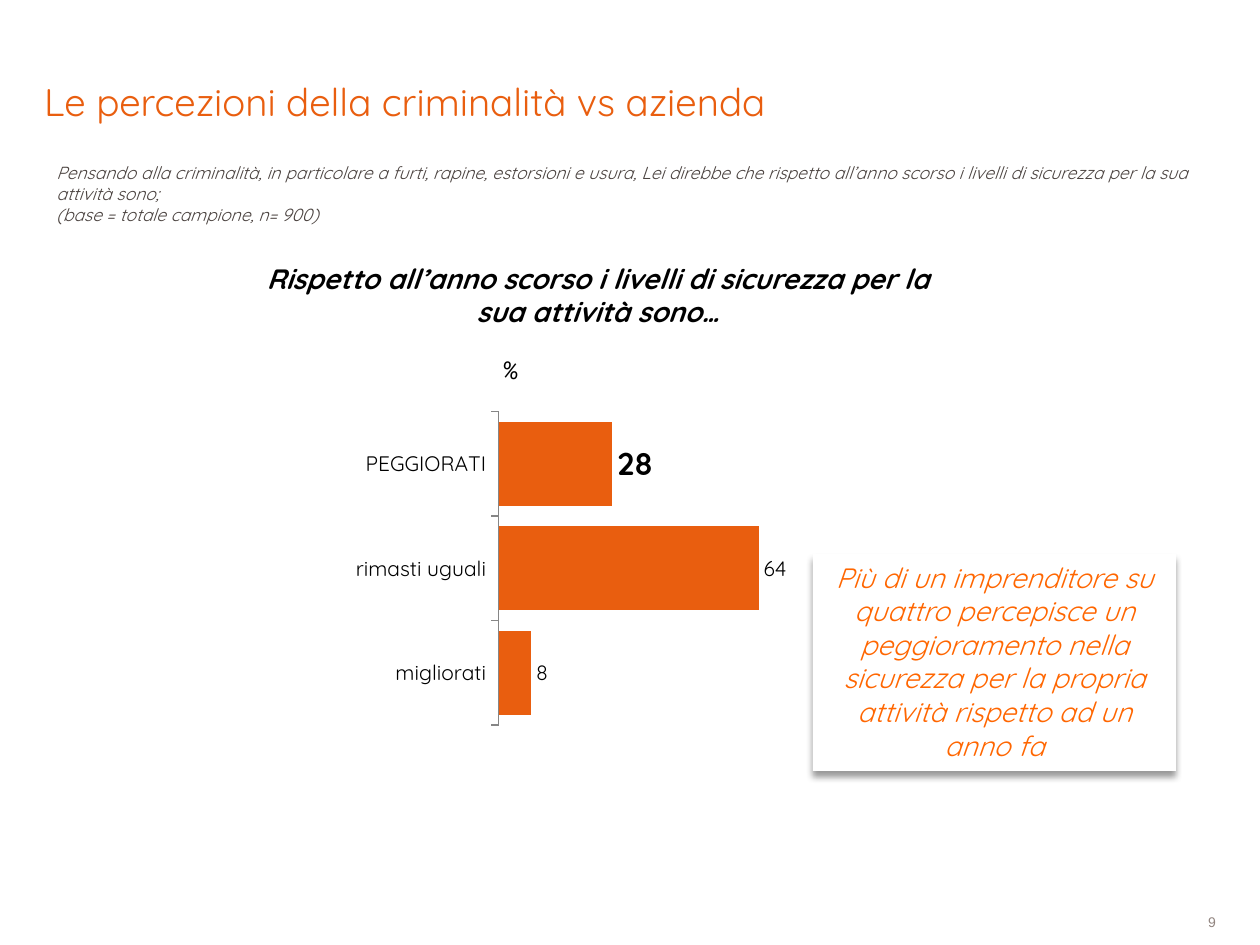
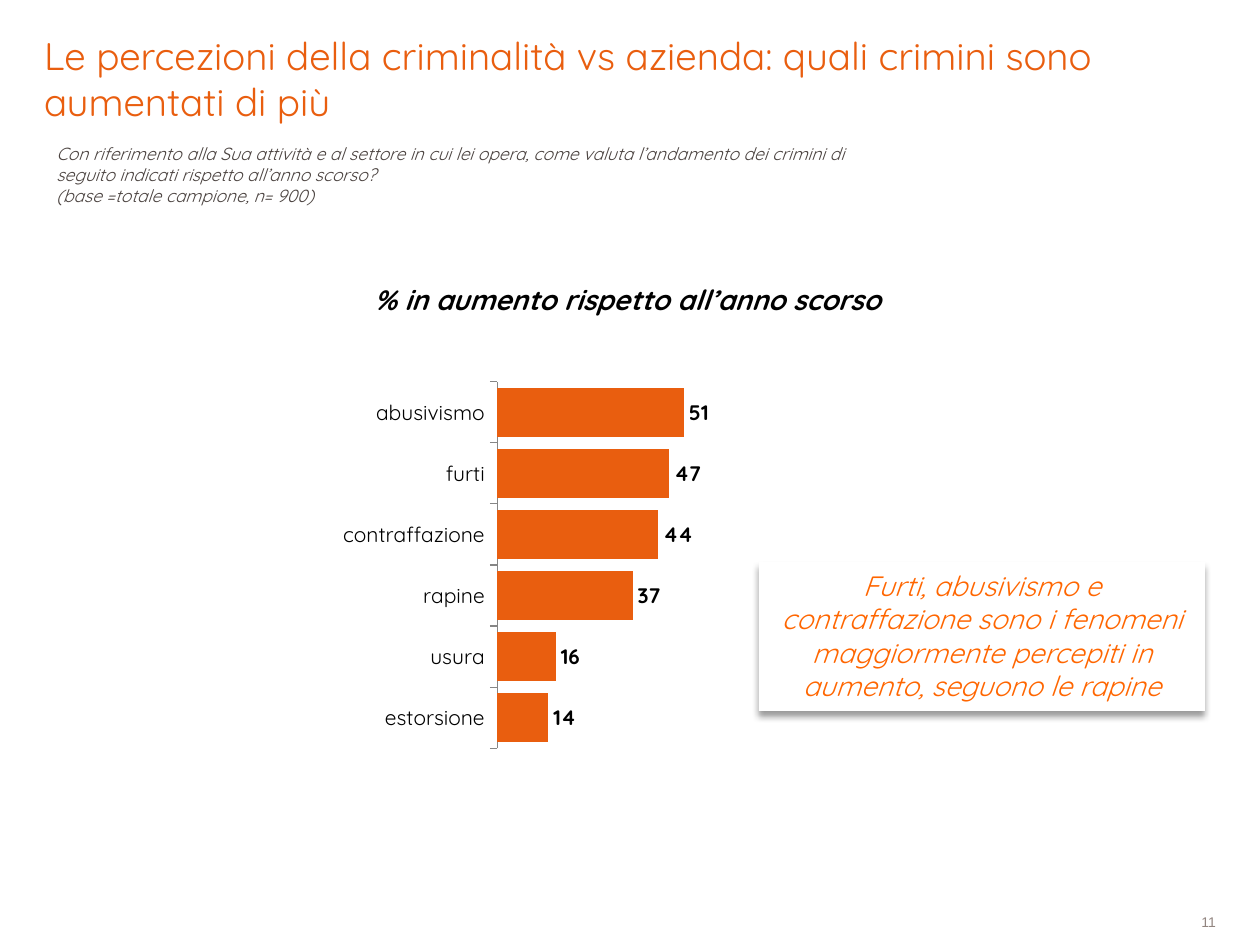
from dataclasses import dataclass

from lxml import etree
from pptx import Presentation
from pptx.chart.data import CategoryChartData
from pptx.dml.color import RGBColor
from pptx.enum.chart import XL_CHART_TYPE, XL_LABEL_POSITION, XL_TICK_MARK
from pptx.enum.shapes import MSO_SHAPE
from pptx.enum.text import MSO_ANCHOR, MSO_AUTO_SIZE, PP_ALIGN
from pptx.oxml import parse_xml
from pptx.oxml.ns import nsdecls, qn
from pptx.util import Emu, Pt

BAR = XL_CHART_TYPE.BAR_CLUSTERED
OUTSIDE_END = XL_LABEL_POSITION.OUTSIDE_END
TICK_OUT, TICK_NONE = XL_TICK_MARK.OUTSIDE, XL_TICK_MARK.NONE
RECT = MSO_SHAPE.RECTANGLE
TOP, MIDDLE, BOTTOM = MSO_ANCHOR.TOP, MSO_ANCHOR.MIDDLE, MSO_ANCHOR.BOTTOM
LEFT, CENTER, RIGHT = PP_ALIGN.LEFT, PP_ALIGN.CENTER, PP_ALIGN.RIGHT

PX_PER_INCH = 126
SLIDE_SIZE = (1260, 945)
TITLE_BOX = (44, 35, 1052, 89)
NUMBER_BOX = (1047, 914, 169, 15)
TITLE_ONLY = 5


# ---- Theme: colours, fonts and type sizes ----
@dataclass(frozen=True)
class Theme:
    orange: str = "E95E0F"
    callout_orange: str = "FF6600"
    grey: str = "4A423F"
    light_grey: str = "928580"
    axis: str = "868686"
    black: str = "000000"
    white: str = "FFFFFF"
    text: str = "Quicksand"
    chart: str = "Roboto"
    number: str = "Arial"


T = Theme()
STYLES = {
    "title": dict(name=T.text, size=22, color=T.orange, bold=False),
    "question": dict(name=T.text, size=10, color=T.grey, italic=True),
    "heading": dict(name=T.text, size=16, color=T.black, bold=True, italic=True),
    "unit": dict(name=T.chart, size=14, color=T.black, italic=True),
    "callout": dict(name=T.text, size=16, color=T.callout_orange, italic=True),
    "number": dict(name=T.number, size=8, color=T.light_grey),
    "chart": dict(name=T.chart, size=18, color=T.black),
    "label": dict(name=T.text, size=12, color=T.black, bold=False),
    "bold_label": dict(name=T.text, size=12, color=T.black, bold=True),
    "key_label": dict(name=T.text, size=18, color=T.black, bold=True),
}


# ---- Helpers ----
def px(n):
    return Emu(round(n * 914400 / PX_PER_INCH))


def rgb(color):
    return RGBColor.from_string(color)


def style_font(font, style):
    for key, value in STYLES[style].items():
        if key == "color":
            font.color.rgb = rgb(value)
        else:
            setattr(font, key, Pt(value) if key == "size" else value)


def fill_text(tf, paragraphs, style, align=LEFT, anchor=TOP, inset=True):
    frame = dict(word_wrap=True, auto_size=MSO_AUTO_SIZE.NONE, vertical_anchor=anchor)
    if not inset:
        frame.update(dict.fromkeys(
            ("margin_left", "margin_top", "margin_right", "margin_bottom"), 0))
    for key, value in frame.items():
        setattr(tf, key, value)
    for i, text in enumerate(paragraphs):
        p = tf.add_paragraph() if i else tf.paragraphs[0]
        p.alignment = align
        r = p.add_run()
        r.text = text
        style_font(r.font, style)


# ---- Elements ----
def add_text(s, box, paragraphs, style, **layout):
    sp = s.shapes.add_textbox(*map(px, box))
    fill_text(sp.text_frame, paragraphs, style, **layout)


def add_slide(prs, title, number):
    s = prs.slides.add_slide(prs.slide_layouts[TITLE_ONLY])
    sp = s.shapes.title
    sp.left, sp.top, sp.width, sp.height = map(px, TITLE_BOX)
    fill_text(sp.text_frame, [title], "title", anchor=BOTTOM, inset=False)
    add_text(s, NUMBER_BOX, [number], "number",
             align=RIGHT, anchor=MIDDLE, inset=False)
    return s


def add_callout(s, box, text):
    sp = s.shapes.add_shape(RECT, *map(px, box))
    sp.fill.solid()
    sp.fill.fore_color.rgb = rgb(T.white)
    sp.line.fill.background()
    sp.shadow.inherit = False
    effects = sp.element.spPr.find(qn("a:effectLst"))
    effects.append(parse_xml(
        f'<a:outerShdw {nsdecls("a")} blurRad="{Pt(4)}" dist="{Pt(3)}" '
        f'dir="5400000" rotWithShape="0"><a:srgbClr val="{T.black}">'
        '<a:alpha val="40000"/></a:srgbClr></a:outerShdw>'))
    fill_text(sp.text_frame, [text], "callout", align=CENTER)


def set_plot_layout(chart, **edges):
    plot_area = chart.element.find(".//" + qn("c:plotArea"))
    for old in plot_area.findall(qn("c:layout")):
        plot_area.remove(old)
    layout = etree.Element(qn("c:layout"))
    manual = etree.SubElement(layout, qn("c:manualLayout"))
    values = dict(layoutTarget="inner", xMode="edge", yMode="edge", **edges)
    for key, value in values.items():
        etree.SubElement(manual, qn("c:" + key)).set("val", str(value))
    plot_area.insert(0, layout)


def add_bar_chart(s, box, values, plot_height, label_style, key_point=None):
    data = CategoryChartData(number_format="0")
    data.categories = list(values)
    data.add_series("Series 1", list(values.values()))
    chart = s.shapes.add_chart(BAR, *map(px, box), data).chart
    chart.has_legend = chart.has_title = False
    style_font(chart.font, "chart")
    set_plot_layout(chart, x=0.28, y=0, w=0.5, h=plot_height)

    # Axes
    cat, val = chart.category_axis, chart.value_axis
    for key, value in dict(reverse_order=True, major_tick_mark=TICK_OUT,
                           minor_tick_mark=TICK_NONE).items():
        setattr(cat, key, value)
    cat.format.line.color.rgb = rgb(T.axis)
    style_font(cat.tick_labels.font, "label")
    for key, value in dict(minimum_scale=0, maximum_scale=100, major_unit=10,
                           has_major_gridlines=False, visible=False).items():
        setattr(val, key, value)

    # Bars and value labels
    plot = chart.plots[0]
    plot.gap_width = 24
    plot.vary_by_categories = False
    series = plot.series[0]
    series.format.fill.solid()
    series.format.fill.fore_color.rgb = rgb(T.orange)
    labels = series.data_labels
    for key, value in dict(show_value=True, number_format="0",
                           number_format_is_linked=False,
                           position=OUTSIDE_END).items():
        setattr(labels, key, value)
    style_font(labels.font, label_style)
    if key_point is not None:
        label = series.points[key_point].data_label
        style_font(label.font, "key_label")
        label.position = OUTSIDE_END


# ---- Slides ----
def build_security_levels(prs):
    s = add_slide(prs, "Le percezioni della criminalità vs azienda", "9")
    add_bar_chart(s, (271, 411, 813, 532),
                  {"PEGGIORATI": 28, "rimasti uguali": 64, "migliorati": 8},
                  0.59, "label", key_point=0)
    add_text(s, (486, 355, 49, 29), ["%"], "unit",
             align=CENTER, anchor=MIDDLE, inset=False)
    add_text(s, (249, 255, 698, 81),
             ["Rispetto all’anno scorso i livelli di sicurezza per la "
              "sua attività sono…"], "heading", align=CENTER)
    add_text(s, (44, 156, 1172, 77),
             ["Pensando alla criminalità, in particolare a furti, rapine, "
              "estorsioni e usura, Lei direbbe che rispetto all’anno scorso "
              "i livelli di sicurezza per la sua attività sono;",
              "(base = totale campione, n= 900)"], "question")
    add_callout(s, (813, 554, 363, 217),
                "Più di un imprenditore su quattro percepisce un peggioramento "
                "nella sicurezza per la propria attività rispetto ad un anno fa")


def build_rising_crimes(prs):
    s = add_slide(prs, "Le percezioni della criminalità vs azienda: "
                       "quali crimini sono aumentati di più", "11")
    add_text(s, (44, 137, 854, 97),
             ["Con riferimento alla Sua attività e al settore in cui lei opera, "
              "come valuta l’andamento dei crimini di seguito indicati "
              "rispetto all’anno scorso?",
              "(base =totale campione, n= 900)"], "question")
    add_text(s, (348, 276, 559, 47),
             ["% in aumento rispetto all’anno scorso"], "heading", align=CENTER)
    add_bar_chart(s, (292, 381, 733, 510),
                  {"abusivismo": 51, "furti": 47, "contraffazione": 44,
                   "rapine": 37, "usura": 16, "estorsione": 14},
                  0.72, "bold_label")
    add_callout(s, (759, 562, 446, 149),
                "Furti, abusivismo e contraffazione sono i fenomeni "
                "maggiormente percepiti in aumento, seguono le rapine")


def main():
    prs = Presentation()
    prs.slide_width, prs.slide_height = map(px, SLIDE_SIZE)
    build_security_levels(prs)
    build_rising_crimes(prs)
    prs.save("out.pptx")


if __name__ == "__main__":
    main()
